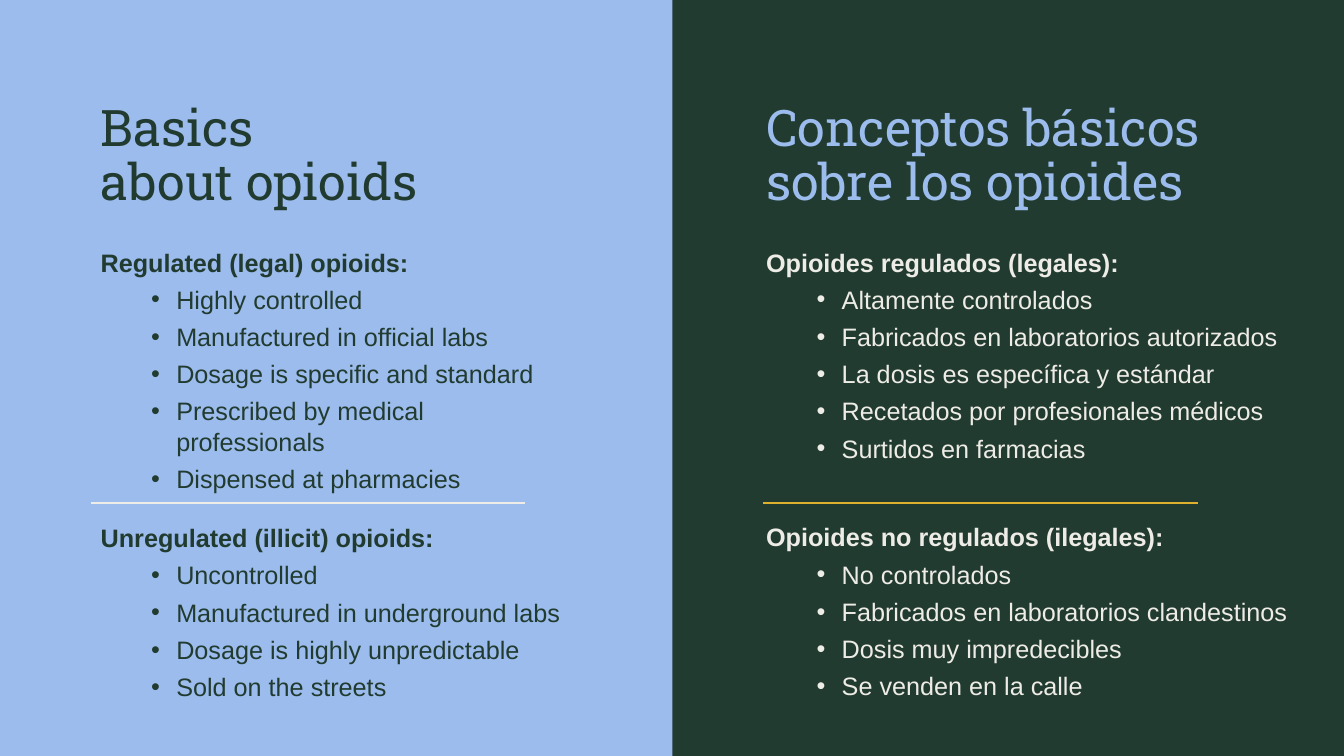
from lxml.etree import SubElement
from pptx import Presentation
from pptx.dml.color import RGBColor
from pptx.enum.shapes import MSO_CONNECTOR as Connector, MSO_SHAPE as Shape
from pptx.enum.text import MSO_ANCHOR as Anchor
from pptx.oxml.ns import qn
from pptx.util import Inches, Pt

GREEN, BLUE, CREAM, GOLD = "223B30", "9BBCED", "EEECE7", "DDB02E"

ENGLISH = [
    ("Regulated (legal) opioids:", [
        "Highly controlled", "Manufactured in official labs",
        "Dosage is specific and standard",
        "Prescribed by medical professionals", "Dispensed at pharmacies"]),
    ("Unregulated (illicit) opioids:", [
        "Uncontrolled", "Manufactured in underground labs",
        "Dosage is highly unpredictable", "Sold on the streets"]),
]
SPANISH = [
    ("Opioides regulados (legales):", [
        "Altamente controlados", "Fabricados en laboratorios autorizados",
        "La dosis es específica y estándar",
        "Recetados por profesionales médicos", "Surtidos en farmacias"]),
    ("Opioides no regulados (ilegales):", [
        "No controlados", "Fabricados en laboratorios clandestinos",
        "Dosis muy impredecibles", "Se venden en la calle"]),
]


def color(value):
    return RGBColor.from_string(value)


def add_text_frame(slide, left, top, width, height, anchor=Anchor.TOP):
    box = slide.shapes.add_textbox(
        Inches(left), Inches(top), Inches(width), Inches(height))
    frame = box.text_frame
    frame.word_wrap = True
    frame.vertical_anchor = anchor
    return frame


def style(paragraph, name, size, text_color, bold=False):
    font = paragraph.font
    font.name, font.size, font.bold = name, Pt(size), bold
    font.color.rgb = color(text_color)


def make_bullet(paragraph):
    paragraph.level = 1
    properties = paragraph._p.get_or_add_pPr()
    properties.set("marL", str(Inches(0.75)))
    properties.set("indent", str(Inches(-0.25)))
    SubElement(properties, qn("a:buFont"), typeface="Arial")
    SubElement(properties, qn("a:buChar"), char="•")


def add_title(slide, left, top, text, text_color):
    frame = add_text_frame(slide, left, top, 4.79, 1.45, Anchor.BOTTOM)
    paragraph = frame.paragraphs[0]
    paragraph.text = text
    paragraph.line_spacing = 0.9
    style(paragraph, "Roboto Slab", 36, text_color)


def add_sections(slide, left, top, width, sections, text_color, section_gap):
    frame = add_text_frame(slide, left, top, width, 4.5)
    for number, (heading, items) in enumerate(sections):
        paragraph = frame.add_paragraph() if number else frame.paragraphs[0]
        paragraph.text = heading
        if number:
            paragraph.line_spacing = 1.5
            paragraph.space_before = Pt(section_gap)
        style(paragraph, "Arial", 18, text_color, bold=True)
        for item in items:
            paragraph = frame.add_paragraph()
            paragraph.text = item
            paragraph.space_before = Pt(5)
            make_bullet(paragraph)
            style(paragraph, "Arial", 18, text_color)


def add_divider(slide, left, top, line_color):
    divider = slide.shapes.add_connector(
        Connector.STRAIGHT, Inches(left), Inches(top),
        Inches(left + 4.31), Inches(top))
    divider.line.color.rgb = color(line_color)
    divider.line.width = Pt(2)
    SubElement(divider._element.spPr, qn("a:effectLst"))


def add_language_panel(slide, left, title, title_color, sections, text_color,
                       body_width, section_gap, divider_left, divider_color):
    add_title(slide, left, 0.7, title, title_color)
    add_sections(slide, left, 2.4, body_width, sections, text_color, section_gap)
    add_divider(slide, divider_left, 4.99, divider_color)


def main():
    presentation = Presentation()
    presentation.slide_width = Inches(13.33)
    presentation.slide_height = Inches(7.5)
    slide = presentation.slides.add_slide(presentation.slide_layouts[6])
    slide.background.fill.solid()
    slide.background.fill.fore_color.rgb = color(GREEN)

    # Blue left half
    half = slide.shapes.add_shape(
        Shape.RECTANGLE, 0, 0, Inches(6.67), Inches(7.5))
    half.shadow.inherit = False
    half.fill.solid()
    half.fill.fore_color.rgb = color(BLUE)
    half.line.fill.background()

    # English on the left, Spanish on the right
    add_language_panel(slide, 0.9, "Basics \vabout opioids", GREEN, ENGLISH,
                       GREEN, 4.79, 10, 0.9, CREAM)
    add_language_panel(slide, 7.5, "Conceptos básicos sobre los opioides", BLUE,
                       SPANISH, CREAM, 5.45, 31, 7.57, GOLD)
    presentation.save("out.pptx")


if __name__ == "__main__":
    main()
